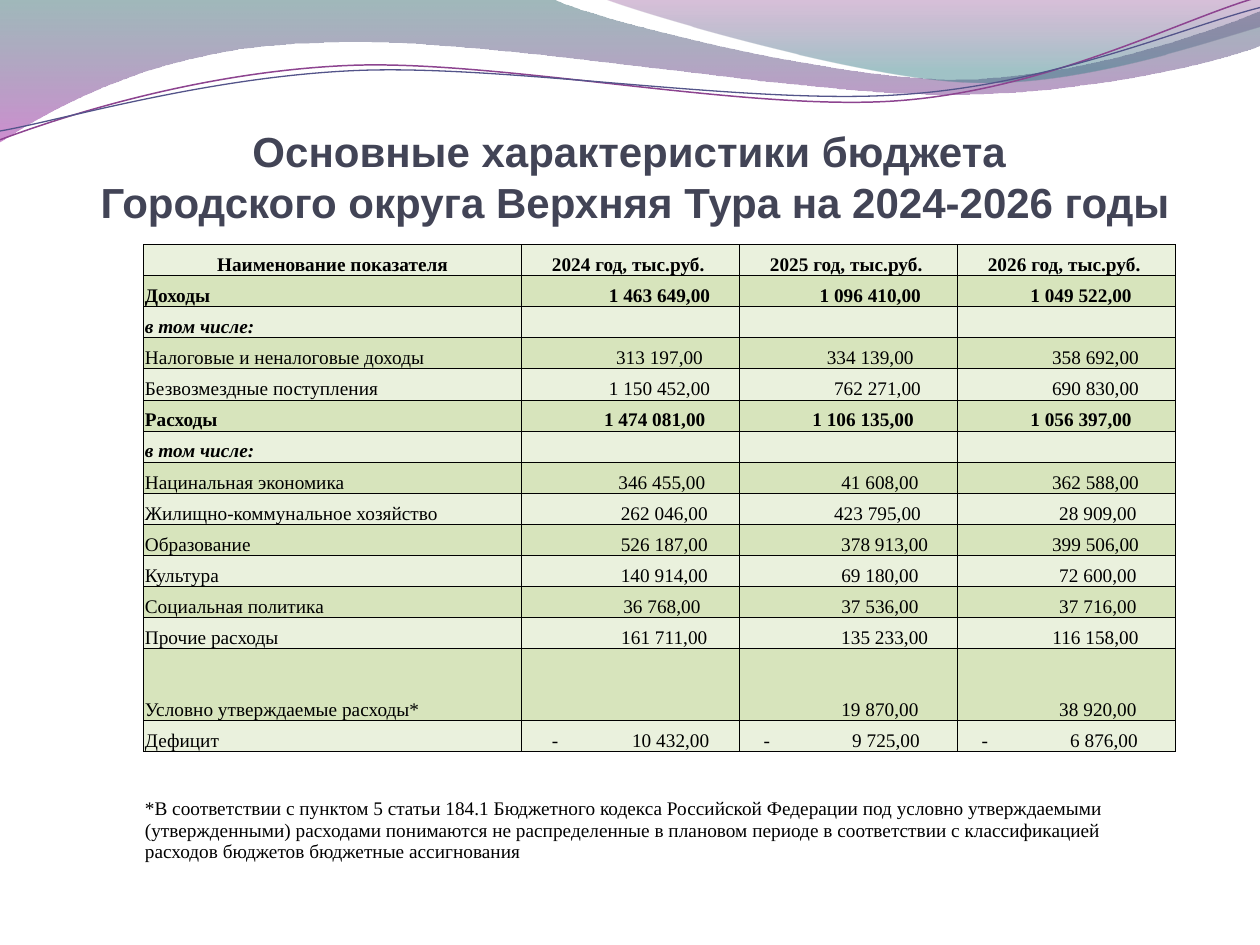
from lxml.etree import SubElement
from pptx import Presentation
from pptx.dml.color import RGBColor
from pptx.enum.text import MSO_ANCHOR, PP_ALIGN
from pptx.oxml.ns import qn
from pptx.util import Inches, Pt

COLORS = {
    "title": "424456", "text": "000000", "border": "000000",
    "light": "EAF1DD", "dark": "D7E4BC",
    "teal": "2D6368", "magenta": "A530A9", "plum": "7F2F82", "sea": "2F7B82",
    "violet": "8D4490", "indigo": "53548A",
}
TITLE = "Основные характеристики бюджета \vГородского округа Верхняя Тура на 2024-2026 годы"
HEADER = ("Наименование показателя", "2024 год, тыс.руб. ", "2025 год, тыс.руб. ", "2026 год, тыс.руб. ")
ROWS = [
    ("Доходы", "1 463 649,00", "1 096 410,00", "1 049 522,00"),
    ("в том числе:", "", "", ""),
    ("Налоговые и неналоговые доходы", "313 197,00", "334 139,00", "358 692,00"),
    ("Безвозмездные поступления", "1 150 452,00", "762 271,00", "690 830,00"),
    ("Расходы", "1 474 081,00", "1 106 135,00", "1 056 397,00"),
    ("в том числе:", "", "", ""),
    ("Нацинальная экономика", "346 455,00", "41 608,00", "362 588,00"),
    ("Жилищно-коммунальное хозяйство", "262 046,00", "423 795,00", "28 909,00"),
    ("Образование", "526 187,00", "378 913,00", "399 506,00"),
    ("Культура", "140 914,00", "69 180,00", "72 600,00"),
    ("Социальная политика", "36 768,00", "37 536,00", "37 716,00"),
    ("Прочие расходы", "161 711,00", "135 233,00", "116 158,00"),
    ("Условно утверждаемые расходы*", "", "19 870,00", "38 920,00"),
    ("Дефицит", "-\t10 432,00", "-\t9 725,00", "-\t6 876,00"),
]
INDENT_STEPS = {
    "Доходы": (12, 9, 6), "Налоговые и неналоговые доходы": (12, 9, 12),
    "Безвозмездные поступления": (12, 12, 12), "Расходы": (10, 6, 6),
    "Нацинальная экономика": (13, 13, 12), "Жилищно-коммунальное хозяйство": (14, 12, 13),
    "Образование": (14, 15, 12), "Культура": (14, 13, 13), "Социальная политика": (13, 13, 13),
    "Прочие расходы": (14, 15, 12), "Условно утверждаемые расходы*": (0, 13, 13),
}
INDENT_STEP = 11 / 4 / 72
NOTE = ("*В соответствии с пунктом 5 статьи 184.1 Бюджетного кодекса Российской Федерации под условно "
        "утверждаемыми (утвержденными) расходами понимаются не распределенные в плановом периоде в "
        "соответствии с классификацией расходов бюджетов бюджетные ассигнования")
BOLD_LABELS = {"Доходы", "Расходы", "в том числе:"}
TALL_LABEL = "Условно утверждаемые расходы*"
COLUMN_WIDTHS = (3, 1.73, 1.73, 1.73)
MINUS_INSETS = (0, 0.24, 0.19, 0.19)
DEFICIT_INSETS = (0, 0.24, 0.3, 0.3)
ROW_HEIGHT, TALL_HEIGHT, NOTE_HEIGHT = 3.46 / 14, 0.57, 0.92

WAVES = [
    {"start": (0, 0),
     "segments": [(4.4, 0), (4.76, 0.17, 6.64, 0.63, 7.58, 0.63), (8.53, 0.63, 9.58, 0.26, 10, 0.09),
                  (10.01, 0.36), (9.83, 0.44, 8.7, 0.76, 7.46, 0.75),
                  (6.22, 0.75, 3.82, 0.28, 2.57, 0.34), (1.29, 0.36, 0.46, 0.83, -0.01, 1.13)],
     "stops": [(0, "teal", 45), (1, "magenta", 55)]},
    {"start": (4.79, -0.01),
     "segments": [(5.09, 0.11, 6.82, 0.62, 7.69, 0.65), (8.56, 0.69, 9.61, 0.32, 10, 0.21), (10, 0)],
     "stops": [(0, "plum", 30), (0.8, "sea", 45)]},
    {"start": (0, 1.11),
     "segments": [(0.48, 0.93, 1.58, 0.57, 2.77, 0.52), (3.95, 0.47, 5.93, 0.89, 7.13, 0.8),
                  (8.33, 0.71, 9.38, 0.15, 9.98, -0.02)],
     "line": ("violet", 0.85)},
    {"start": (0, 1.04),
     "segments": [(0.47, 0.96, 1.64, 0.61, 2.83, 0.56), (4.03, 0.51, 5.97, 0.84, 7.17, 0.75),
                  (8.36, 0.67, 9.41, 0.21, 10, 0.06)],
     "line": ("indigo", 0.75)},
]


def rgb(name):
    return RGBColor.from_string(COLORS[name])


def bend(shape, segments):
    legs = iter(list(shape._element.iter(qn("a:lnTo"))))
    for segment in segments:
        leg = next(legs)
        if len(segment) == 6:
            leg.tag = qn("a:cubicBezTo")
            for extra in (next(legs), next(legs)):
                leg.append(extra[0])
                extra.getparent().remove(extra)


def add_wave(page, start, segments, stops=None, line=None):
    points = [(Inches(s[i]), Inches(s[i + 1])) for s in segments for i in range(0, len(s), 2)]
    builder = page.shapes.build_freeform(Inches(start[0]), Inches(start[1]))
    builder.add_line_segments(points, close=stops is not None)
    shape = builder.convert_to_shape()
    bend(shape, segments)
    shape.shadow.inherit = False
    if line:
        shape.fill.background()
        shape.line.color.rgb = rgb(line[0])
        shape.line.width = Pt(line[1])
        return
    shape.line.fill.background()
    shape.fill.gradient()
    shape.fill.gradient_angle = 270
    for stop, (position, color, _) in zip(shape.fill.gradient_stops, stops):
        stop.position = position
        stop.color.rgb = rgb(color)
    for color, (_, _, opacity) in zip(shape._element.spPr.iter(qn("a:srgbClr")), stops):
        SubElement(color, qn("a:alpha"), val=str(opacity * 1000))


def write(frame, text, font="Times New Roman", size=11, color="text", bold=False, italic=False,
          align=PP_ALIGN.LEFT, tab=None):
    frame.word_wrap = True
    paragraph = frame.paragraphs[0]
    paragraph.text = text
    paragraph.alignment = align
    if tab:
        stops = SubElement(paragraph._p.get_or_add_pPr(), qn("a:tabLst"))
        SubElement(stops, qn("a:tab"), pos=str(Inches(tab)), algn="r")
    for span in paragraph.runs:
        span.font.name = font
        span.font.size = Pt(size)
        span.font.bold = bold
        span.font.italic = italic
        span.font.color.rgb = rgb(color)
    if not text:
        paragraph._p.get_or_add_endParaRPr().set("sz", str(size * 100))


def set_cell(cell, fill=None, borders=(), left=0.01, bottom=0, anchor=MSO_ANCHOR.BOTTOM):
    cell.margin_left, cell.margin_right = Inches(left), Inches(0.01)
    cell.margin_top, cell.margin_bottom = Inches(0.01), Inches(bottom)
    cell.vertical_anchor = anchor
    properties = cell._tc.get_or_add_tcPr()
    for side in ("lnL", "lnR", "lnT", "lnB"):
        edge = SubElement(properties, qn("a:" + side), w=str(Pt(0.5)))
        if side in borders:
            solid = SubElement(edge, qn("a:solidFill"))
            SubElement(solid, qn("a:srgbClr"), val=COLORS["border"])
        else:
            SubElement(edge, qn("a:noFill"))
    if fill:
        cell.fill.solid()
        cell.fill.fore_color.rgb = rgb(fill)
    else:
        cell.fill.background()


def add_budget_table(page):
    lines = [HEADER] + ROWS
    heights = [TALL_HEIGHT if line[0] == TALL_LABEL else ROW_HEIGHT for line in lines]
    heights += [ROW_HEIGHT, NOTE_HEIGHT]
    frame = page.shapes.add_table(len(heights), len(HEADER), Inches(1.14), Inches(1.94),
                                  Inches(sum(COLUMN_WIDTHS)), Inches(sum(heights)))
    table = frame.table
    table.first_row = table.horz_banding = False
    for column, width in zip(table.columns, COLUMN_WIDTHS):
        column.width = Inches(width)
    for row, height in zip(table.rows, heights):
        row.height = Inches(height)

    for r, line in enumerate(lines):
        label = line[0]
        for c, text in enumerate(line):
            cell = table.cell(r, c)
            left, tab = 0.01, None
            align = PP_ALIGN.CENTER if r == 0 or c else PP_ALIGN.LEFT
            if "\t" in text:
                align, left = PP_ALIGN.LEFT, MINUS_INSETS[c]
                tab = COLUMN_WIDTHS[c] - left - DEFICIT_INSETS[c]
            elif c and text and label in INDENT_STEPS:
                left += INDENT_STEPS[label][c - 1] * INDENT_STEP
            set_cell(cell, "dark" if r % 2 else "light", ("lnL", "lnR", "lnT", "lnB"), left)
            write(cell.text_frame, text, bold=r == 0 or label in BOLD_LABELS,
                  italic=label == "в том числе:", align=align, tab=tab)

    gap, last = len(lines), len(lines) + 1
    table.cell(last, 0).merge(table.cell(last, len(HEADER) - 1))
    for c in range(len(HEADER)):
        set_cell(table.cell(gap, c), borders=("lnT",))
        write(table.cell(gap, c).text_frame, "")
        set_cell(table.cell(last, c), bottom=0.17, anchor=MSO_ANCHOR.MIDDLE)
        write(table.cell(last, c).text_frame, "" if c else NOTE)


def main():
    deck = Presentation()
    deck.slide_width, deck.slide_height = Inches(10), Inches(7.5)
    page = deck.slides.add_slide(deck.slide_layouts[6])
    for wave in WAVES:
        add_wave(page, **wave)

    box = page.shapes.add_textbox(Inches(0.5), Inches(0.86), Inches(9.08), Inches(0.94))
    frame = box.text_frame
    frame.margin_left = frame.margin_right = frame.margin_bottom = 0
    frame.vertical_anchor = MSO_ANCHOR.BOTTOM
    write(frame, TITLE, font="Arial", size=24, color="title", bold=True, align=PP_ALIGN.CENTER)

    add_budget_table(page)
    deck.save("out.pptx")


if __name__ == "__main__":
    main()
